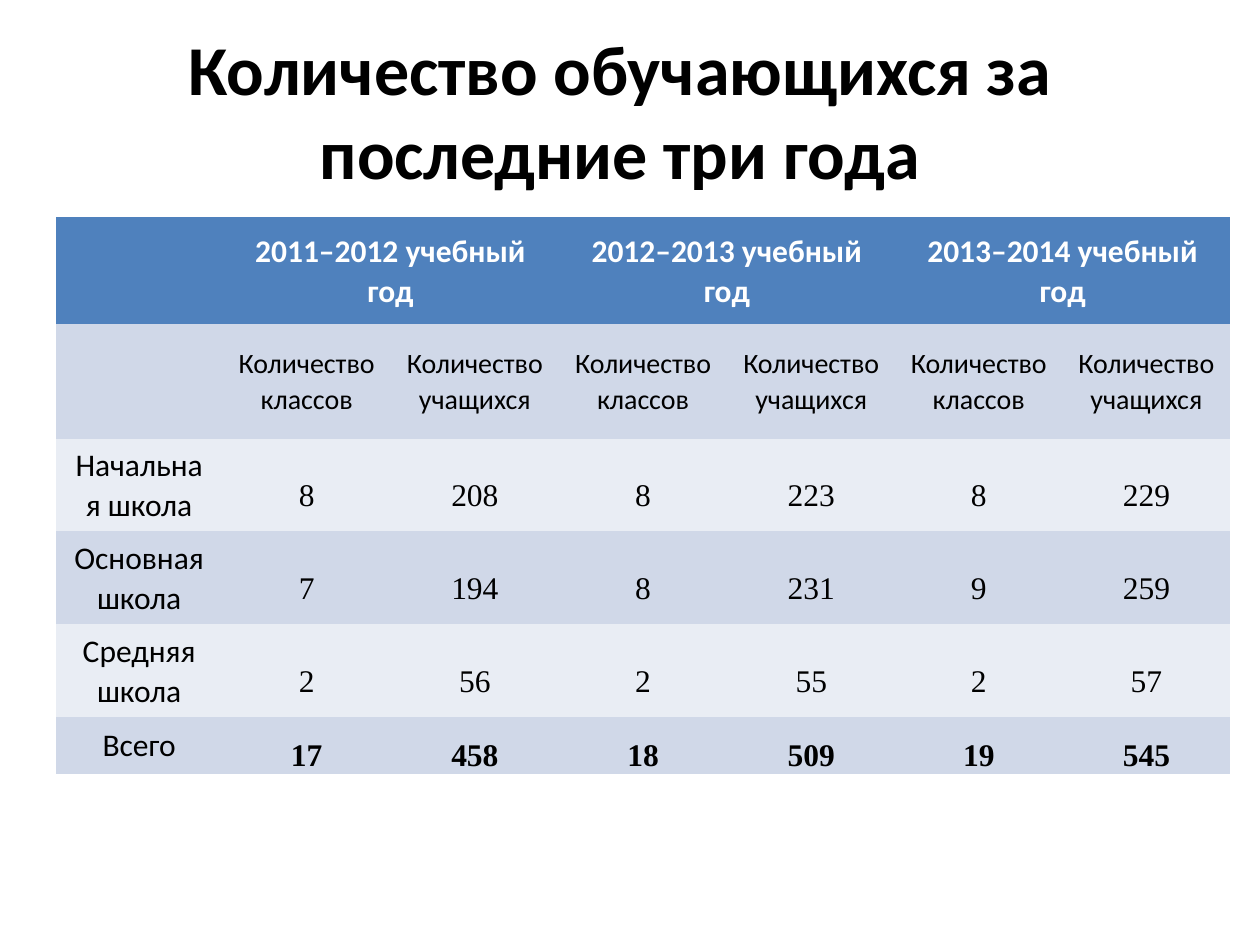
from dataclasses import dataclass

from pptx import Presentation
from pptx.dml.color import RGBColor
from pptx.enum.text import MSO_ANCHOR as Anchor, MSO_AUTO_SIZE as Fit, PP_ALIGN as Align
from pptx.oxml.ns import qn
from pptx.table import Table, _Cell as Cell
from pptx.util import Pt


@dataclass(frozen=True)
class Look:
    size: float = 18
    face: str = "Calibri"
    ink: str = "000000"
    bold: bool = False
    side: float = 7.2
    top: float = 3.6
    base: float = 3.6
    line: float = 1.04
    after: float = 0


BLUE, DARK, PALE = "4F81BD", "D0D8E8", "E9EDF4"
PLAIN = "{2D5ABB26-0587-4C30-8999-92F81FD0307C}"
NUMBER = dict(face="Times New Roman", side=5.4, top=15.84, base=0, line=0.74, after=10)
YEAR = Look(ink="FFFFFF", bold=True)
HEAD = Look(size=16)
LABEL = Look()
COUNT = Look(**NUMBER)
TOTAL = Look(bold=True, **NUMBER)

YEARS = ["2011–2012", "2012–2013", "2013–2014"]
HEADS = ["Количество классов", "Количество учащихся"]
DATA = [
    ("Начальная школа", [8, 208, 8, 223, 8, 229]),
    ("Основная школа", [7, 194, 8, 231, 9, 259]),
    ("Средняя школа", [2, 56, 2, 55, 2, 57]),
    ("Всего", [17, 458, 18, 509, 19, 545]),
]
WIDTHS = [95.04, 96.48, 95.76, 96.48, 95.76, 95.76, 95.76]
HEIGHTS = [61.2, 65.52, 52.99, 52.99, 52.99, 32.4]


def tint(code: str) -> RGBColor:
    """Turn a hex string into a colour."""
    return RGBColor.from_string(code)


def put(cell: Cell, text: str, look: Look) -> None:
    """Write centred text into a table cell."""
    cell.text = text
    cell.vertical_anchor = Anchor.MIDDLE
    cell.margin_left = cell.margin_right = Pt(look.side)
    cell.margin_top, cell.margin_bottom = Pt(look.top), Pt(look.base)
    para = cell.text_frame.paragraphs[0]
    para.alignment = Align.CENTER
    para.line_spacing = look.line
    para.space_after = Pt(look.after)
    font = para.font
    font.size, font.name, font.bold = Pt(look.size), look.face, look.bold
    font.color.rgb = tint(look.ink)


def frame(table: Table) -> None:
    """Set the grid sizes, the plain style and the row bands."""
    table._tbl.tblPr.find(qn("a:tableStyleId")).text = PLAIN
    table.first_row = table.horz_banding = False
    for col, width in zip(table.columns, WIDTHS):
        col.width = Pt(width)
    for num, (row, height) in enumerate(zip(table.rows, HEIGHTS)):
        row.height = Pt(height)
        for cell in row.cells:
            cell.fill.solid()
            cell.fill.fore_color.rgb = tint(BLUE if num == 0 else DARK if num % 2 else PALE)


def fill(table: Table) -> None:
    """Write the year heads, column heads and counts."""
    for num, year in enumerate(YEARS):
        left = 1 + 2 * num
        table.cell(0, left).merge(table.cell(0, left + 1))
        put(table.cell(0, left), f"{year} учебный год", YEAR)
        for step, head in enumerate(HEADS):
            put(table.cell(1, left + step), head, HEAD)
    for row, (name, counts) in enumerate(DATA, 2):
        put(table.cell(row, 0), name, LABEL)
        look = TOTAL if name == "Всего" else COUNT
        for col, count in enumerate(counts, 1):
            put(table.cell(row, col), str(count), look)


def main() -> None:
    """Build the slide and save it."""
    deck = Presentation()
    deck.slide_width, deck.slide_height = Pt(720), Pt(540)
    slide = deck.slides.add_slide(deck.slide_layouts[5])

    title = slide.shapes.title
    title.left, title.top, title.width, title.height = Pt(48.24), Pt(9.36), Pt(612), Pt(106.56)
    title.text_frame.text = "Количество обучающихся за последние три года"
    title.text_frame.auto_size = Fit.NONE
    title.text_frame.vertical_anchor = Anchor.MIDDLE
    para = title.text_frame.paragraphs[0]
    para.alignment = Align.CENTER
    para.font.size, para.font.name, para.font.bold = Pt(40), "Calibri", True
    para.font.color.rgb = tint("000000")

    table = slide.shapes.add_table(
        len(HEIGHTS), len(WIDTHS), Pt(32), Pt(124), Pt(sum(WIDTHS)), Pt(sum(HEIGHTS))
    ).table
    frame(table)
    fill(table)
    deck.save("out.pptx")


if __name__ == "__main__":
    main()
